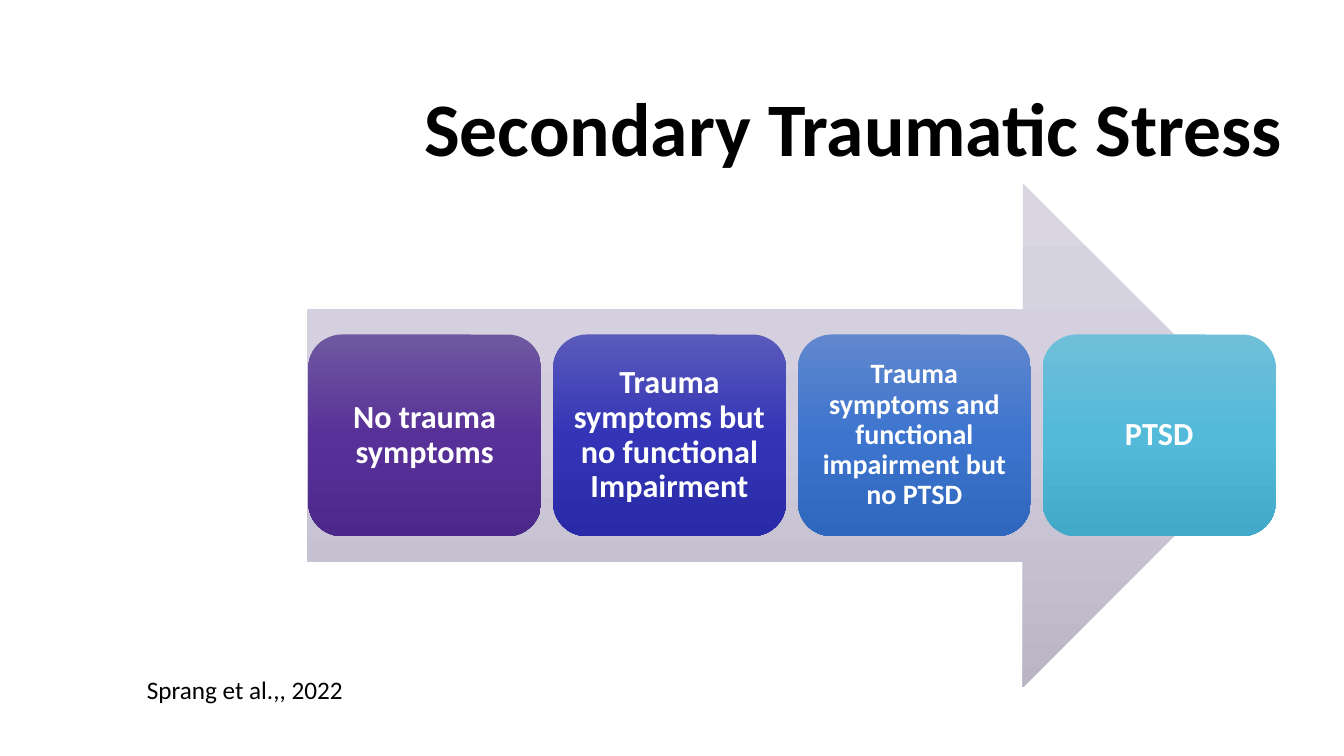
from copy import deepcopy

from pptx import Presentation
from pptx.dml.color import RGBColor
from pptx.enum.shapes import MSO_SHAPE as SHAPE
from pptx.enum.text import MSO_ANCHOR as ANCHOR, MSO_AUTO_SIZE as AUTO, PP_ALIGN as ALIGN
from pptx.oxml.ns import qn
from pptx.util import Cm, Pt

STAGES = [
    ("No trauma symptoms", 23, 0.25, ("6F58A0", "583198", "4D288B")),
    ("Trauma symptoms but no functional Impairment", 23, 0.25, ("5A5ABB", "3435B6", "292AA7")),
    ("Trauma symptoms and functional impairment but no PTSD", 20, 0.2, ("6187CE", "3D75CE", "2F67BE")),
    ("PTSD", 23, 0.25, ("70BFD9", "53BAD9", "43A9C8")),
]
STAGE_LEFT, STAGE_STEP = 7.77, 6.17


def color(value):
    return RGBColor.from_string(value)


def set_font(p, size, value, bold=False):
    p.font.name = "Calibri"
    p.font.size = Pt(size)
    p.font.bold = bold
    p.font.color.rgb = color(value)


def add_gradient_shape(slide, kind, left, top, width, height, colors):
    s = slide.shapes.add_shape(kind, Cm(left), Cm(top), Cm(width), Cm(height))
    s.shadow.inherit = False
    s.line.fill.background()
    s.fill.gradient()
    s.fill.gradient_angle = 270
    stops = s._element.spPr.find(qn("a:gradFill")).find(qn("a:gsLst"))
    stops.append(deepcopy(stops[0]))
    for i, (stop, value) in enumerate(zip(s.fill.gradient_stops, colors)):
        stop.position = i / 2
        stop.color.rgb = color(value)
    return s


def add_stage(slide, index, text, size, inset, colors):
    left = STAGE_LEFT + index * STAGE_STEP
    s = add_gradient_shape(slide, SHAPE.ROUNDED_RECTANGLE, left, 8.43, 5.87, 5.08, colors)
    tf = s.text_frame
    tf.word_wrap = True
    tf.vertical_anchor = ANCHOR.MIDDLE
    tf.margin_left = tf.margin_right = tf.margin_top = tf.margin_bottom = Cm(inset)
    p = tf.paragraphs[0]
    p.text = text
    p.alignment = ALIGN.CENTER
    p.line_spacing = 0.9
    set_font(p, size, "FFFFFF", bold=True)


def add_label(slide, text, left, top, width, height, size, bold=False):
    tf = slide.shapes.add_textbox(Cm(left), Cm(top), Cm(width), Cm(height)).text_frame
    tf.word_wrap = False
    tf.auto_size = AUTO.SHAPE_TO_FIT_TEXT
    p = tf.paragraphs[0]
    p.text = text
    set_font(p, size, "000000", bold)


def main():
    prs = Presentation()
    prs.slide_width, prs.slide_height = Cm(33.87), Cm(19.05)
    slide = prs.slides.add_slide(prs.slide_layouts[6])
    add_gradient_shape(slide, SHAPE.RIGHT_ARROW, 7.75, 4.62, 24.38, 12.7,
                       ("D9D6E2", "D1CDDD", "B9B5C5"))
    for i, stage in enumerate(STAGES):
        add_stage(slide, i, *stage)
    add_label(slide, "Secondary Traumatic Stress", 10.44, 1.91, 22.38, 2.57, 54, bold=True)
    add_label(slide, "Sprang et al.,, 2022", 3.45, 16.87, 5.51, 1.02, 18)
    prs.save("out.pptx")


if __name__ == "__main__":
    main()
